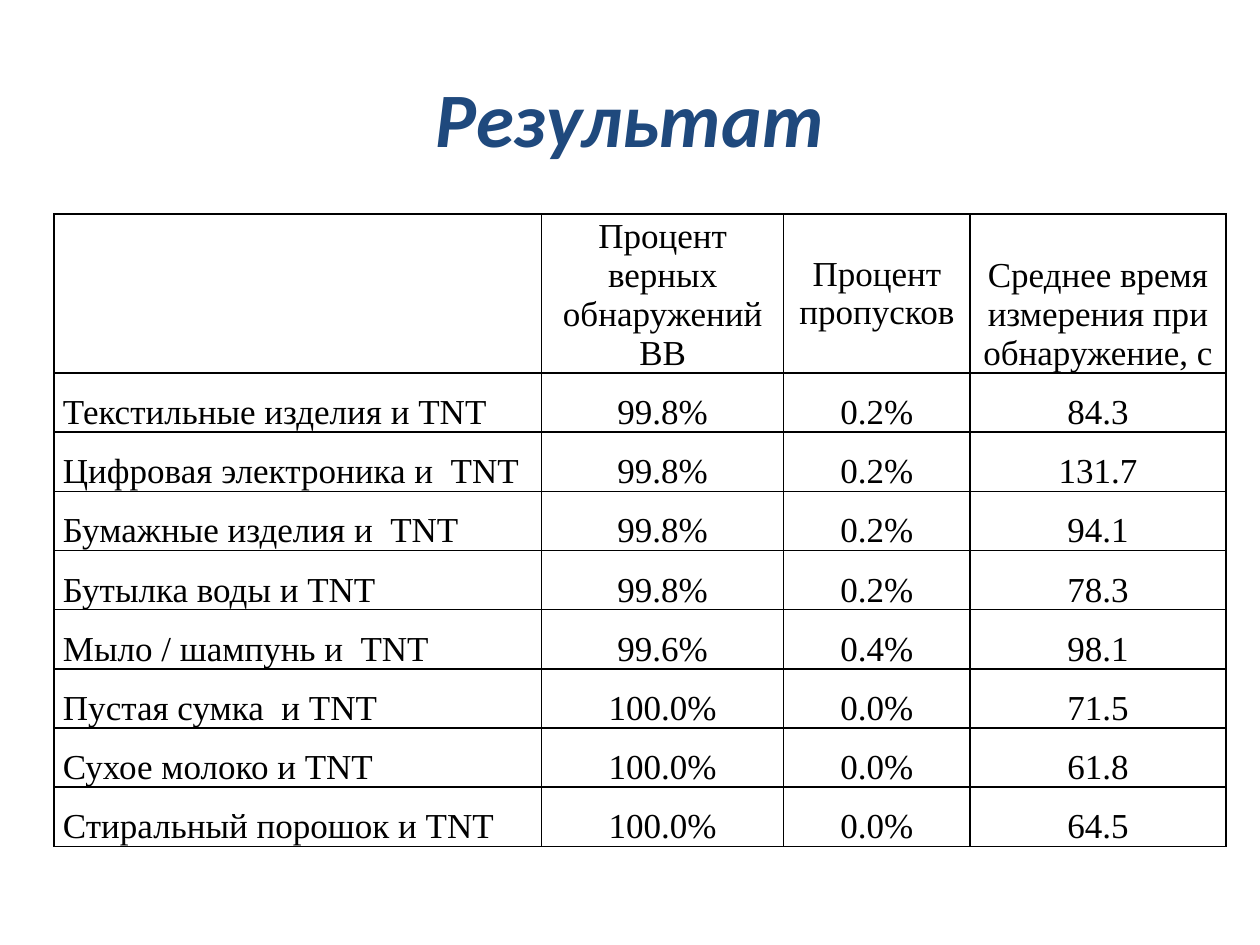
"""Build the slide with the table of detection results."""
import dataclasses

import pptx
import pptx.dml.color
import pptx.enum.text
import pptx.oxml
import pptx.oxml.ns
import pptx.util
from pptx.util import Inches

TITLE = "Результат"
HEADERS = [
    "",
    "Процент верных обнаружений ВВ",
    "Процент пропусков",
    "Среднее время измерения при обнаружение, с",
]
RESULTS = [
    ("Текстильные изделия и TNT", "99.8%", "0.2%", "84.3"),
    ("Цифровая электроника и  TNT", "99.8%", "0.2%", "131.7"),
    ("Бумажные изделия и  TNT", "99.8%", "0.2%", "94.1"),
    ("Бутылка воды и TNT", "99.8%", "0.2%", "78.3"),
    ("Мыло / шампунь и  TNT", "99.6%", "0.4%", "98.1"),
    ("Пустая сумка  и TNT", "100.0%", "0.0%", "71.5"),
    ("Сухое молоко и TNT", "100.0%", "0.0%", "61.8"),
    ("Стиральный порошок и TNT", "100.0%", "0.0%", "64.5"),
]
COLUMN_WIDTHS = [3.87, 1.92, 1.48, 2.03]
HEADER_HEIGHT, RESULT_HEIGHT = 1.26, 0.47
MISSES_COLUMN = 2

ALIGN = pptx.enum.text.PP_ALIGN
ANCHOR = pptx.enum.text.MSO_ANCHOR


@dataclasses.dataclass(frozen=True)
class Theme:
    title_font: str = "Calibri"
    title_size: int = 44
    title_color: str = "1F497D"
    table_font: str = "Times New Roman"
    table_size: int = 20
    table_color: str = "000000"
    border_color: str = "000000"
    border_width: int = 1


THEME = Theme()


def style_font(font, name, size, color):
    font.name = name
    font.size = pptx.util.Pt(size)
    font.color.rgb = pptx.dml.color.RGBColor.from_string(color)


def add_borders(cell):
    properties = cell._tc.get_or_add_tcPr()
    width = pptx.util.Pt(THEME.border_width)
    for position, side in enumerate(("lnL", "lnR", "lnT", "lnB")):
        border = pptx.oxml.parse_xml(
            f'<a:{side} {pptx.oxml.ns.nsdecls("a")} w="{width}"><a:solidFill>'
            f'<a:srgbClr val="{THEME.border_color}"/></a:solidFill></a:{side}>'
        )
        properties.insert(position, border)


def fill_cell(cell, text, row, column):
    cell.fill.background()
    add_borders(cell)
    cell.margin_left = cell.margin_right = Inches(0.07)
    cell.margin_top = cell.margin_bottom = 0
    centred = row == 0 and column == MISSES_COLUMN
    cell.vertical_anchor = ANCHOR.MIDDLE if centred else ANCHOR.BOTTOM
    paragraph = cell.text_frame.paragraphs[0]
    paragraph.alignment = ALIGN.CENTER if column else ALIGN.LEFT
    if row:
        paragraph.line_spacing = 1.5
    if text:
        run = paragraph.add_run()
        run.text = text
        style_font(run.font, THEME.table_font, THEME.table_size, THEME.table_color)


def add_title(slide):
    title = slide.shapes.title
    title.left, title.top = Inches(0.5), Inches(0.3)
    title.width, title.height = Inches(9), Inches(1.25)
    title.text_frame.vertical_anchor = ANCHOR.MIDDLE
    paragraph = title.text_frame.paragraphs[0]
    paragraph.alignment = ALIGN.CENTER
    run = paragraph.add_run()
    run.text = TITLE
    style_font(run.font, THEME.title_font, THEME.title_size, THEME.title_color)
    run.font.bold = run.font.italic = True


def add_results(slide):
    rows = [HEADERS, *RESULTS]
    heights = [HEADER_HEIGHT] + [RESULT_HEIGHT] * len(RESULTS)
    table = slide.shapes.add_table(
        len(rows), len(HEADERS), Inches(0.43), Inches(1.7),
        Inches(sum(COLUMN_WIDTHS)), Inches(sum(heights)),
    ).table
    table.first_row = table.horz_banding = False
    for column, width in zip(table.columns, COLUMN_WIDTHS):
        column.width = Inches(width)
    for row_index, (texts, height) in enumerate(zip(rows, heights)):
        table.rows[row_index].height = Inches(height)
        for column_index, text in enumerate(texts):
            cell = table.cell(row_index, column_index)
            fill_cell(cell, text, row_index, column_index)


def main():
    presentation = pptx.Presentation()
    presentation.slide_width = Inches(10)
    presentation.slide_height = Inches(7.5)
    slide = presentation.slides.add_slide(presentation.slide_layouts[5])
    add_title(slide)
    add_results(slide)
    presentation.save("out.pptx")


if __name__ == "__main__":
    main()
